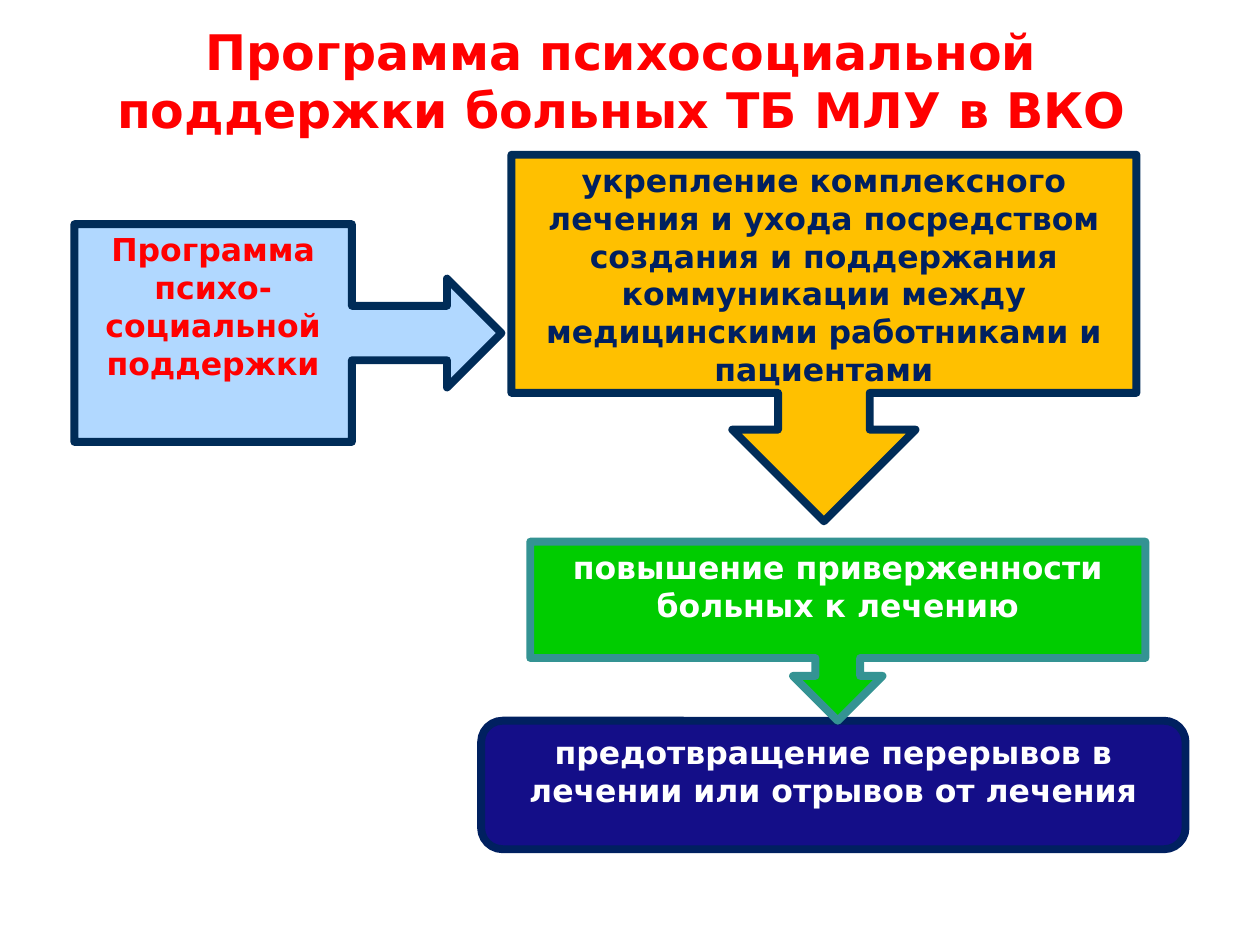
from pptx import Presentation
from pptx.dml.color import RGBColor
from pptx.enum import shapes, text
from pptx.util import Cm, Pt

FONT = "DejaVu Sans"
COLORS = {
    "red": "FF0000", "white": "FFFFFF", "navy": "002060", "outline": "002C58",
    "amber": "FFC000", "sky": "B1D8FF", "green": "00CC00", "teal": "349393",
    "indigo": "140E88",
}
DOWN = shapes.MSO_SHAPE.DOWN_ARROW_CALLOUT
RIGHT = shapes.MSO_SHAPE.RIGHT_ARROW_CALLOUT
ROUNDED = shapes.MSO_SHAPE.ROUNDED_RECTANGLE

# Back to front: preset, box in cm (left, top, width, height), fill, line, font colour, lines
STEPS = [
    (DOWN, (10.31, 3.12, 12.6, 7.39), "amber", "outline", "navy",
     ["укрепление комплексного лечения и ухода посредством создания и поддержания "
      "коммуникации между медицинскими работниками и пациентами"]),
    (RIGHT, (1.5, 4.52, 8.61, 4.39), "sky", "outline", "red",
     ["Программа психо-", "социальной поддержки"]),
    (ROUNDED, (9.7, 14.53, 14.2, 2.59), "indigo", "navy", "white",
     ["предотвращение перерывов в лечении или отрывов от лечения"]),
    (DOWN, (10.69, 10.92, 12.4, 3.61), "green", "teal", "white",
     ["повышение приверженности больных к лечению"]),
]


def color(name):
    return RGBColor.from_string(COLORS[name])


def write_text(frame, lines, size, font_color, anchor):
    """Fill a text frame with centred bold paragraphs."""
    frame.word_wrap = True
    frame.auto_size = text.MSO_AUTO_SIZE.NONE
    frame.vertical_anchor = anchor
    frame.text = "\n".join(lines)
    for paragraph in frame.paragraphs:
        paragraph.alignment = text.PP_ALIGN.CENTER
        font = paragraph.font
        font.name, font.size, font.bold = FONT, Pt(size), True
        font.color.rgb = color(font_color)


def add_title(slide, box, title):
    """Move and format the title placeholder."""
    shape = slide.shapes.title
    shape.left, shape.top, shape.width, shape.height = map(Cm, box)
    write_text(shape.text_frame, [title], 28, "red", text.MSO_ANCHOR.MIDDLE)


def add_step(slide, preset, box, fill, line, font_color, lines):
    """Add one block of the flow; callout presets include their arrow."""
    shape = slide.shapes.add_shape(preset, *map(Cm, box))
    shape.shadow.inherit = False
    shape.fill.solid()
    shape.fill.fore_color.rgb = color(fill)
    shape.line.color.rgb = color(line)
    shape.line.width = Pt(4.5)
    write_text(shape.text_frame, lines, 18, font_color, text.MSO_ANCHOR.TOP)


def main():
    presentation = Presentation()
    presentation.slide_width, presentation.slide_height = Cm(25.4), Cm(19.05)
    slide = presentation.slides.add_slide(presentation.slide_layouts[5])

    # Heading
    add_title(slide, (1.09, 0.53, 22.86, 2.16),
              "Программа психосоциальной поддержки больных ТБ МЛУ в ВКО")

    # Flow from the programme to its outcomes
    for step in STEPS:
        add_step(slide, *step)

    presentation.save("out.pptx")


if __name__ == "__main__":
    main()
